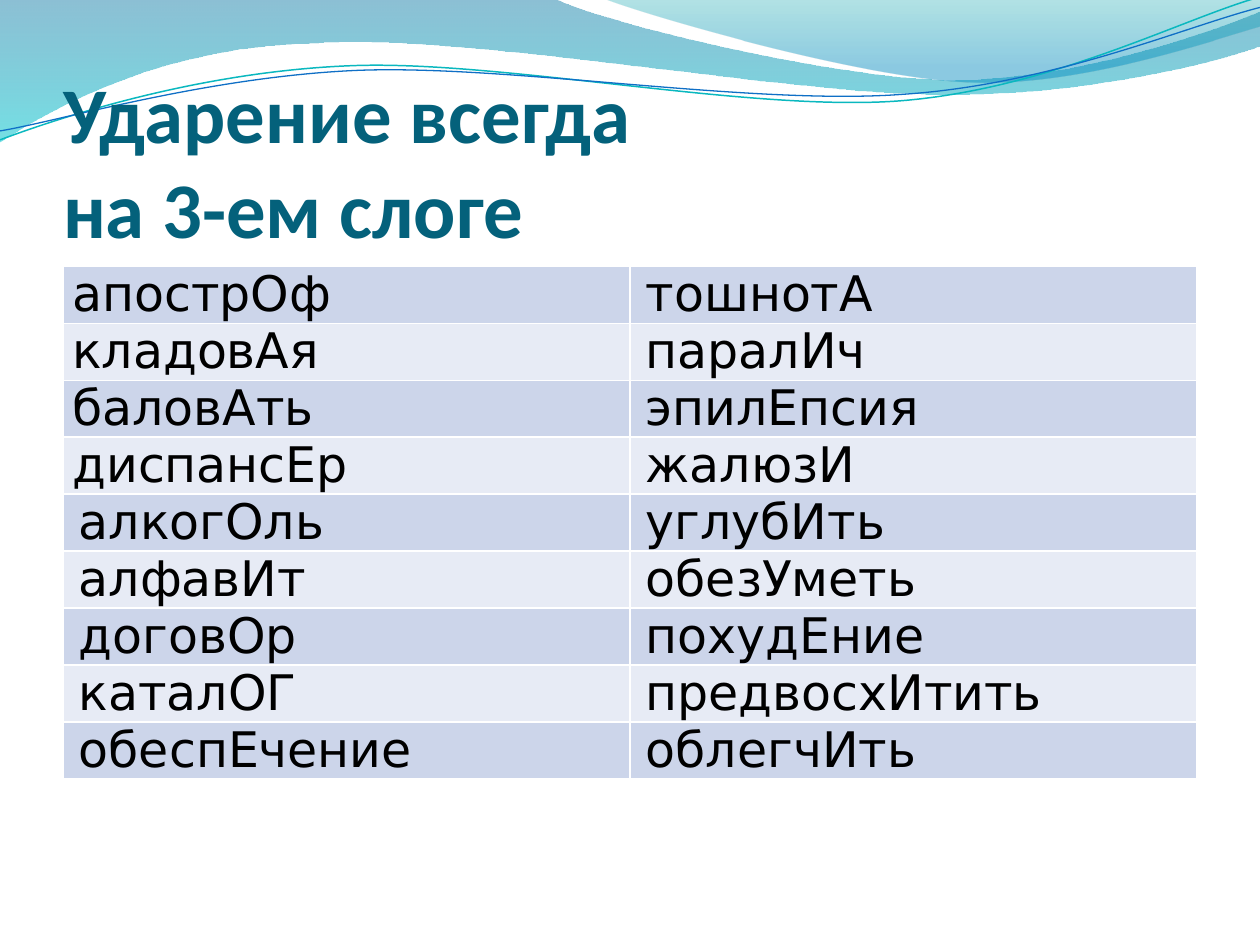
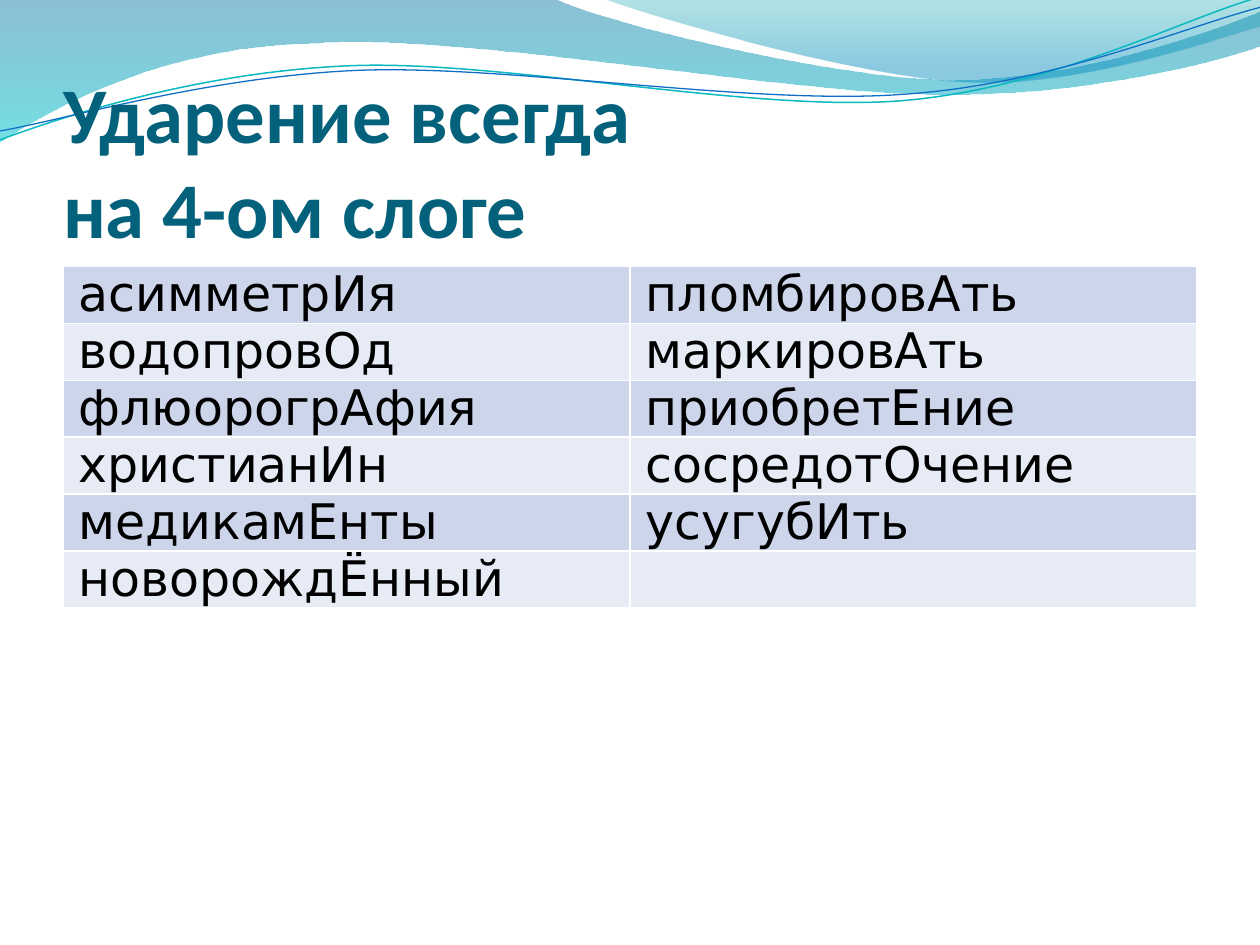
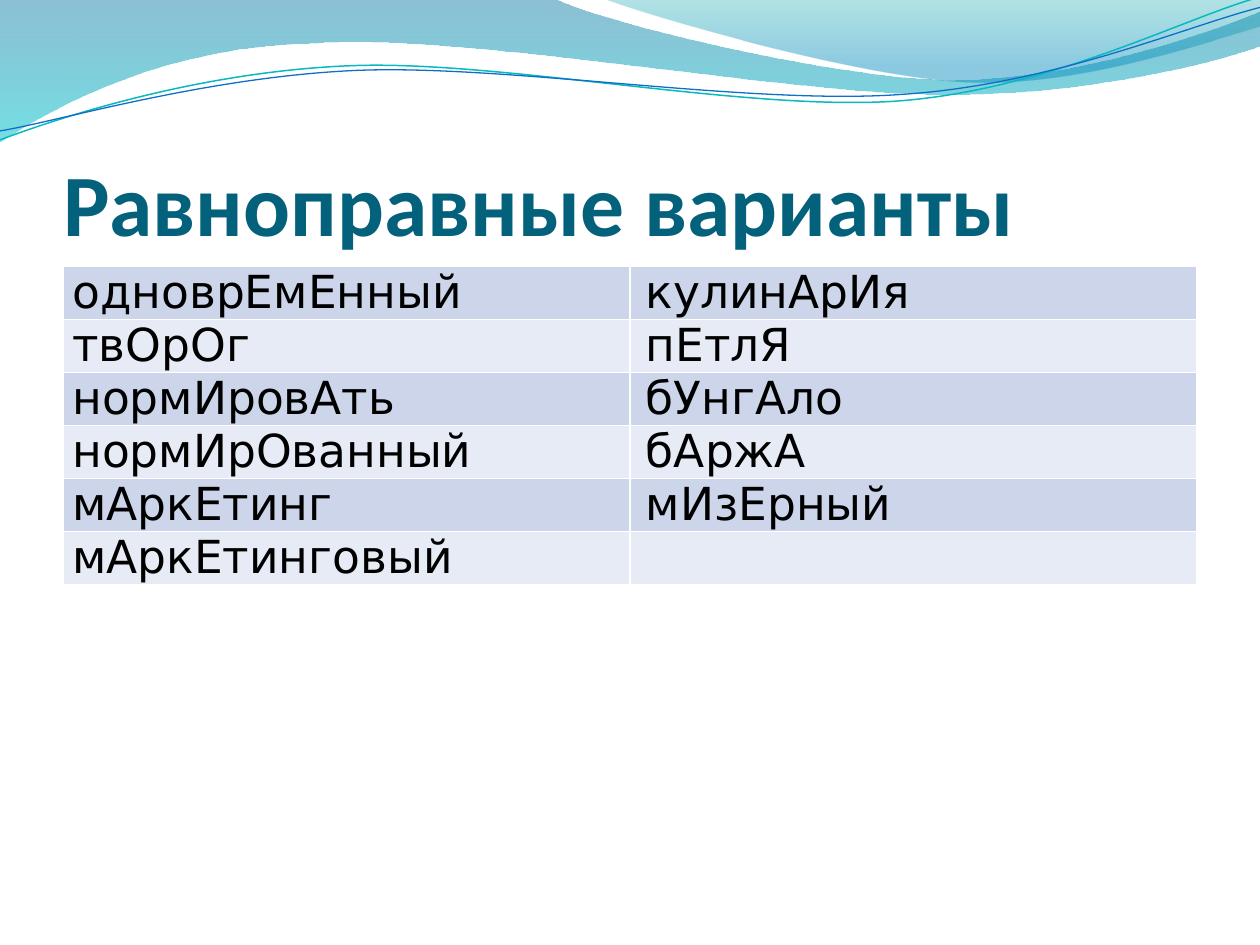
from dataclasses import dataclass
from itertools import zip_longest

from lxml import etree
from pptx import Presentation
from pptx.dml.color import RGBColor
from pptx.enum.text import MSO_ANCHOR, MSO_AUTO_SIZE, PP_ALIGN
from pptx.oxml.ns import qn
from pptx.util import Cm, Pt

LEFT = PP_ALIGN.LEFT
JUSTIFY = PP_ALIGN.JUSTIFY
BOTTOM = MSO_ANCHOR.BOTTOM
NO_AUTOFIT = MSO_AUTO_SIZE.NONE
TITLE_ONLY = 5
LINE_ROTATION = 357.3


@dataclass(frozen=True)
class Theme:
    title_font: str = "Calibri"
    table_font: str = "DejaVu Sans"
    title_color: str = "04617B"
    text_color: str = "000000"
    border_color: str = "FFFFFF"
    band_colors: tuple = ("CCD5EA", "E7EBF5")
    wide_wave: tuple = ((0, "0074A1", 45), (1, "00C6CF", 55))
    right_wave: tuple = ((0, "00A1A9", 30), (0.8, "008BBF", 45))
    teal_line: str = "0AB8BF"
    blue_line: str = "0F6FC6"
    title_size: float = 45
    large_title_size: float = 50
    table_size: float = 28
    small_table_size: float = 26


THEME = Theme()

WIDE_WAVE = [
    [(0, 0)],
    [(11.18, -0.03)],
    [(12.09, 0.43), (16.87, 1.6), (19.25, 1.6)],
    [(21.67, 1.6), (24.33, 0.66), (25.4, 0.23)],
    [(25.43, 0.91)],
    [(24.97, 1.12), (22.1, 1.93), (18.95, 1.9)],
    [(15.8, 1.9), (9.7, 0.71), (6.53, 0.86)],
    [(3.28, 0.91), (1.17, 2.11), (-0.03, 2.87)],
    [(0, 0)],
]
RIGHT_WAVE = [
    [(12.17, -0.03)],
    [(12.93, 0.28), (17.32, 1.57), (19.53, 1.65)],
    [(21.74, 1.75), (24.41, 0.81), (25.4, 0.53)],
    [(25.4, 0)],
    [(12.17, -0.03)],
]
TEAL_LINE = [
    [(-0.05, 2.22)],
    [(1.19, 1.82), (4.01, 1.04), (7.05, 1.06)],
    [(10.05, 1.07), (15.02, 2.37), (18.08, 2.29)],
    [(21.13, 2.2), (23.86, 0.91), (25.41, 0.55)],
]
BLUE_LINE = [
    [(-0.04, 2.04)],
    [(1.16, 1.9), (4.17, 1.15), (7.2, 1.16)],
    [(10.25, 1.18), (15.13, 2.25), (18.19, 2.16)],
    [(21.22, 2.1), (23.93, 1.06), (25.45, 0.75)],
]

THIRD_SYLLABLE = (
    ["апострОф", "кладовАя", "баловАть", "диспансЕр", "алкогОль",
     "алфавИт", "договОр", "каталОГ", "обеспЕчение"],
    ["тошнотА", "паралИч", "эпилЕпсия", "жалюзИ", "углубИть",
     "обезУметь", "похудЕние", "предвосхИтить", "облегчИть"],
)
FOURTH_SYLLABLE = (
    ["асимметрИя", "водопровОд", "флюорогрАфия", "христианИн",
     "медикамЕнты", "новорождЁнный"],
    ["пломбировАть", "маркировАть", "приобретЕние", "сосредотОчение",
     "усугубИть"],
)
EQUAL_VARIANTS = (
    ["одноврЕмЕнный", "твОрОг", "нормИровАть", "нормИрОванный",
     "мАркЕтинг", "мАркЕтинговый"],
    ["кулинАрИя", "пЕтлЯ ", "бУнгАло", "бАржА", "мИзЕрный"],
)


def color(value):
    return RGBColor.from_string(value)


def write_text(frame, text, *, font, size, ink, bold=False, align=LEFT, indent=0):
    para = frame.paragraphs[0]
    para.text = text
    para.alignment = align
    if indent:
        para._p.get_or_add_pPr().set("indent", str(Cm(indent)))
    for span in para.runs:
        span.font.name = font
        span.font.size = Pt(size)
        span.font.bold = bold
        span.font.color.rgb = color(ink)


def bend_segments(shape, segments):
    lines = list(shape.element.spPr.iter(qn("a:lnTo")))
    for line, segment in zip(lines, segments):
        if len(segment) == 1:
            continue
        curve = etree.Element(qn("a:cubicBezTo"))
        for x, y in segment:
            etree.SubElement(curve, qn("a:pt"), x=str(Cm(x) - shape.left),
                             y=str(Cm(y) - shape.top))
        line.getparent().replace(line, curve)


def add_outline(page, segments, closed):
    start, *anchors = [(Cm(x), Cm(y)) for x, y in (part[-1] for part in segments)]
    builder = page.shapes.build_freeform(*start)
    builder.add_line_segments(anchors, close=closed)
    shape = builder.convert_to_shape()
    bend_segments(shape, segments[1:])
    shape.shadow.inherit = False
    return shape


def add_wave(page, segments, stops):
    shape = add_outline(page, segments, True)
    shape.line.fill.background()
    shape.fill.gradient()
    shape.fill.gradient_angle = 270
    for stop, (position, tint, _) in zip(shape.fill.gradient_stops, stops):
        stop.position = position
        stop.color.rgb = color(tint)
    tints = shape.element.spPr.iter(qn("a:srgbClr"))
    for tint, (_, _, opacity) in zip(tints, stops):
        etree.SubElement(tint, qn("a:alpha"), val=str(opacity * 1000))
    return shape


def add_wave_line(page, segments, ink, width):
    shape = add_outline(page, segments, False)
    shape.rotation = LINE_ROTATION
    shape.fill.background()
    shape.line.color.rgb = color(ink)
    shape.line.width = Pt(width)
    return shape


def decorate_master(deck, page):
    waves = [
        add_wave(page, WIDE_WAVE, THEME.wide_wave),
        add_wave(page, RIGHT_WAVE, THEME.right_wave),
        add_wave_line(page, TEAL_LINE, THEME.teal_line, 0.85),
        add_wave_line(page, BLUE_LINE, THEME.blue_line, 0.75),
    ]
    tree = deck.slide_master.shapes.element
    for number, wave in enumerate(waves):
        wave.element.nvSpPr.cNvPr.set("id", str(20 + number))
        tree.insert(2 + number, wave.element)


def add_title(page, text, size):
    box = page.shapes.title
    box.left, box.top, box.width, box.height = Cm(1.27), Cm(1.95), Cm(22.86), Cm(3.17)
    frame = box.text_frame
    frame.auto_size = NO_AUTOFIT
    frame.word_wrap = True
    frame.vertical_anchor = BOTTOM
    frame.margin_left = frame.margin_right = frame.margin_bottom = 0
    frame.margin_top = Cm(0.13)
    write_text(frame, text, font=THEME.title_font, size=size,
               ink=THEME.title_color, bold=True)


def style_cell(cell, fill):
    properties = cell._tc.get_or_add_tcPr()
    for side in ("lnL", "lnR", "lnT", "lnB"):
        border = etree.SubElement(properties, qn(f"a:{side}"), w=str(Pt(1)))
        solid = etree.SubElement(border, qn("a:solidFill"))
        etree.SubElement(solid, qn("a:srgbClr"), val=THEME.border_color)
    cell.fill.solid()
    cell.fill.fore_color.rgb = color(fill)
    cell.margin_left = cell.margin_right = Cm(0.19)
    cell.margin_top = cell.margin_bottom = 0


def add_word_table(page, columns, size, flush_rows, first_height):
    rows = list(zip_longest(*columns, fillvalue=""))
    box = page.shapes.add_table(len(rows), len(columns), Cm(1.27), Cm(5.37),
                                Cm(22.86), Cm(1.04) * len(rows))
    table = box.table
    table.first_row = False
    table.horz_banding = False
    table.rows[0].height = Cm(first_height)
    box.height = Pt(size * 1.2) * len(rows)
    for row_number, words in enumerate(rows):
        fill = THEME.band_colors[row_number % 2]
        for column_number, word in enumerate(words):
            cell = table.cell(row_number, column_number)
            style_cell(cell, fill)
            flush = column_number == 0 and row_number < flush_rows
            if word:
                write_text(cell.text_frame, word, font=THEME.table_font, size=size,
                           ink=THEME.text_color, align=JUSTIFY,
                           indent=0 if flush else 0.13)


def add_word_page(deck, title, columns, title_size=THEME.title_size,
                  table_size=THEME.table_size, flush_rows=0, first_height=1.04):
    page = deck.slides.add_slide(deck.slide_layouts[TITLE_ONLY])
    add_title(page, title, title_size)
    add_word_table(page, columns, table_size, flush_rows, first_height)
    return page


def main():
    deck = Presentation()
    deck.slide_width, deck.slide_height = Cm(25.4), Cm(19.05)
    first_page = add_word_page(deck, "Ударение всегда \vна 3-ем слоге",
                               THIRD_SYLLABLE, flush_rows=4, first_height=0.53)
    decorate_master(deck, first_page)
    add_word_page(deck, "Ударение всегда \vна 4-ом слоге", FOURTH_SYLLABLE)
    add_word_page(deck, "Равноправные варианты", EQUAL_VARIANTS,
                  title_size=THEME.large_title_size,
                  table_size=THEME.small_table_size, flush_rows=6)
    deck.save("out.pptx")


if __name__ == "__main__":
    main()
